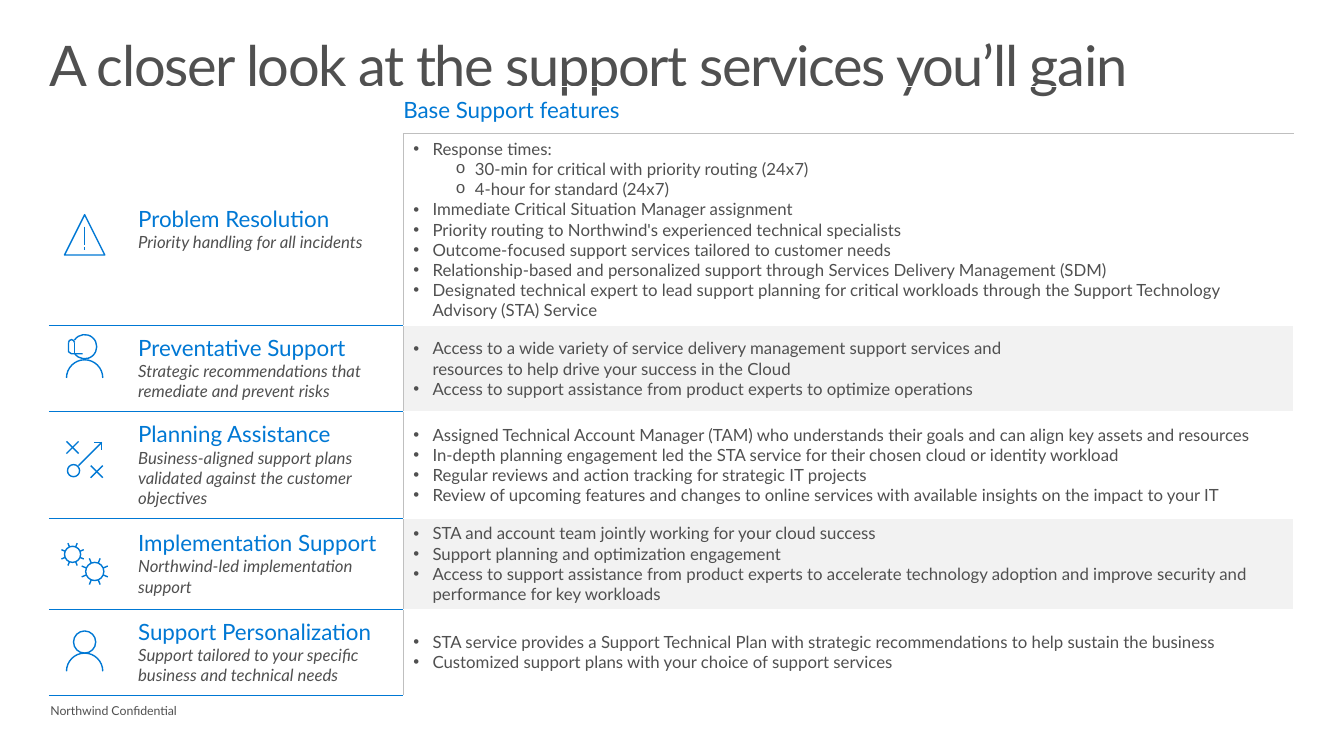
from dataclasses import dataclass
from math import cos, radians, sin, tan

from lxml.etree import SubElement
from pptx import Presentation
from pptx.dml.color import RGBColor as Rgb
from pptx.enum.text import MSO_ANCHOR as Anchor
from pptx.oxml.ns import qn
from pptx.util import Inches, Pt


@dataclass(frozen=True)
class Theme:
    font: str = "Lato"
    blue: str = "0078D4"
    text: str = "505050"
    rule: str = "BFBFBF"
    band: str = "F2F2F2"
    white: str = "FFFFFF"
    title: float = 40
    head: float = 16
    body: float = 12
    foot: float = 8.8


THEME = Theme()

# Marker, its font and the left margin for each list level
LEVELS = [("•", "Arial", 0.19), ("o", "Courier New", 0.61)]

# Each row: height, heading, summary, features as (level, text)
ROWS = [
    (1.87, "Problem Resolution", "Priority handling for all incidents", [
        (0, "Response times:"),
        (1, "30-min for critical with priority routing (24x7)"),
        (1, "4-hour for standard (24x7)"),
        (0, "Immediate Critical Situation Manager assignment"),
        (0, "Priority routing to Northwind's experienced technical specialists"),
        (0, "Outcome-focused support services tailored to customer needs"),
        (0, "Relationship-based and personalized support through Services Delivery Management (SDM)"),
        (0, "Designated technical expert to lead support planning for critical workloads "
            "through the Support Technology Advisory (STA) Service")]),
    (0.85, "Preventative Support", "Strategic recommendations that remediate and prevent risks", [
        (0, "Access to a wide variety of service delivery management support services and \v"
            "resources to help drive your success in the Cloud"),
        (0, "Access to support assistance from product experts to optimize operations")]),
    (1.04, "Planning Assistance",
     "Business-aligned support plans validated against the customer objectives", [
         (0, "Assigned Technical Account Manager (TAM) who understands their goals "
             "and can align key assets and resources"),
         (0, "In-depth planning engagement led the STA service for their chosen cloud or identity workload"),
         (0, "Regular reviews and action tracking for strategic IT projects"),
         (0, "Review of upcoming features and changes to online services "
             "with available insights on the impact to your IT")]),
    (0.88, "Implementation Support", "Northwind-led implementation support", [
        (0, "STA and account team jointly working for your cloud success"),
        (0, "Support planning and optimization engagement"),
        (0, "Access to support assistance from product experts to accelerate technology "
            "adoption and improve security and performance for key workloads")]),
    (0.85, "Support Personalization", "Support tailored to your specific business and technical needs", [
        (0, "STA service provides a Support Technical Plan with strategic recommendations "
            "to help sustain the business"),
        (0, "Customized support plans with your choice of support services")]),
]


# Text
def style(para, size, color, italic=False):
    for run in para.runs:
        font = run.font
        font.name, font.size, font.italic = THEME.font, Pt(size), italic
        font.color.rgb = Rgb.from_string(color)


def add_text(slide, text, box, size, pad=0, anchor=Anchor.TOP):
    frame = slide.shapes.add_textbox(*map(Inches, box)).text_frame
    frame.word_wrap = True
    frame.vertical_anchor = anchor
    frame.margin_left = frame.margin_right = 0
    frame.margin_top = frame.margin_bottom = Inches(pad)
    frame.text = text
    para = frame.paragraphs[0]
    style(para, size, THEME.text)
    return para


def add_bullet(para, level):
    mark, face, left = LEVELS[level]
    props = para._p.get_or_add_pPr()
    props.set("marL", str(Inches(left)))
    props.set("indent", str(Inches(-0.19)))
    SubElement(props, qn("a:buFont")).set("typeface", face)
    SubElement(props, qn("a:buChar")).set("char", mark)


# Table cells
def set_cell(cell, fill, pads, **edges):
    cell.vertical_anchor = Anchor.MIDDLE
    cell.margin_left, cell.margin_top, cell.margin_right, cell.margin_bottom = map(Inches, pads)
    props = cell._tc.get_or_add_tcPr()
    for side in "LRTB":
        if side in edges:
            color, width = edges[side]
            line = SubElement(props, qn(f"a:ln{side}"), w=str(Pt(width)))
            solid = SubElement(line, qn("a:solidFill"))
            SubElement(solid, qn("a:srgbClr"), val=color)
    if fill:
        cell.fill.solid()
        cell.fill.fore_color.rgb = Rgb.from_string(fill)
    else:
        cell.fill.background()


def set_label(cell, head, note):
    cell.text_frame.text = f"{head}\n{note}"
    first, second = cell.text_frame.paragraphs
    style(first, THEME.head, THEME.blue)
    style(second, THEME.body, THEME.text, True)


def set_list(cell, items):
    frame = cell.text_frame
    for i, (level, text) in enumerate(items):
        para = frame.add_paragraph() if i else frame.paragraphs[0]
        para.text = text
        add_bullet(para, level)
        style(para, THEME.body, THEME.text)


def add_grid(slide):
    box = map(Inches, (0.49, 0.86, 12.34, 5.94))
    grid = slide.shapes.add_table(len(ROWS) + 1, 2, *box).table
    grid.first_row = grid.horz_banding = False
    for col, width in zip(grid.columns, (3.51, 8.83)):
        col.width = Inches(width)
    blue, gray = (THEME.blue, 0.5), (THEME.rule, 0.5)
    thick, thin = (THEME.white, 1), (THEME.white, 0.5)

    # Header row
    grid.rows[0].height = Inches(0.45)
    blank, head = grid.cell(0, 0), grid.cell(0, 1)
    set_cell(blank, None, (0.1, 0.05, 0.1, 0.05), B=thick)
    set_cell(head, None, (0, 0.1, 0.19, 0.1), B=gray)
    head.text_frame.text = "Base Support features"
    style(head.text_frame.paragraphs[0], THEME.head, THEME.blue)

    # Service rows
    for i, (height, name, note, items) in enumerate(ROWS, 1):
        grid.rows[i].height = Inches(height)
        label, detail = grid.cell(i, 0), grid.cell(i, 1)
        set_cell(label, None, (0.88, 0.09, 0.09, 0.1),
                 T=thick if i == 1 else blue, R=gray, B=blue)
        set_cell(detail, None if i % 2 else THEME.band, (0.1, 0.05, 0.1, 0.05), L=gray,
                 T={1: gray, 2: thick}.get(i, thin), B=thick if i == 1 else thin)
        set_label(label, name, note)
        set_list(detail, items)


# Icon strokes: (is curved, points in inches)
def line(*points):
    return False, points


def arc(x, y, r, start=0, end=360):
    count = max(1, round(abs(end - start) / 90))
    step = radians(end - start) / count
    pull = 4 / 3 * tan(step / 4)
    points = [(x + r * cos(radians(start)), y + r * sin(radians(start)))]
    for i in range(count):
        a = radians(start) + i * step
        b = a + step
        for t, k in ((a, pull), (b, -pull), (b, 0)):
            points.append((x + r * (cos(t) - k * sin(t)), y + r * (sin(t) + k * cos(t))))
    return True, points


def cross(x, y, size=0.12):
    return [line((x, y), (x + size, y + size)), line((x + size, y), (x, y + size))]


def gear(x, y, r, tip):
    teeth = [radians(22.5 + 45 * i) for i in range(8)]
    return [arc(x, y, r)] + [line(*((x + d * cos(t), y + d * sin(t)) for d in (r, tip))) for t in teeth]


def bend(outline, strokes):
    """Join each three legs of a curved stroke into one Bezier leg."""
    nodes = iter(list(outline))
    for curved, points in strokes:
        next(nodes)
        legs = [next(nodes) for _ in points[1:]]
        if curved:
            for first, second, last in zip(legs[::3], legs[1::3], legs[2::3]):
                first.tag = qn("a:cubicBezTo")
                for leg in (second, last):
                    first.append(leg[0])
                    outline.remove(leg)


def add_icon(slide, strokes):
    pen = None
    for _, points in strokes:
        start, *rest = [(Inches(x), Inches(y)) for x, y in points]
        if pen:
            pen.move_to(*start)
        else:
            pen = slide.shapes.build_freeform(*start)
        pen.add_line_segments(rest, close=False)
    icon = pen.convert_to_shape()
    bend(icon._element.find(".//" + qn("a:path")), strokes)
    icon.shadow.inherit = False
    icon.fill.background()
    icon.line.color.rgb = Rgb.from_string(THEME.blue)
    icon.line.width = Pt(1)


def add_icons(slide):
    warning = [line((0.64, 2.53), (0.84, 2.13), (1.04, 2.53), (0.64, 2.53)),
               line((0.84, 2.25), (0.84, 2.43)), line((0.84, 2.45), (0.84, 2.48))]
    agent = [arc(0.84, 3.75, 0.18, 180, 360), arc(0.84, 3.44, 0.12, 214, 506),
             line((0.74, 3.51), (0.74, 3.4)), arc(0.71, 3.4, 0.03, 0, -180),
             line((0.68, 3.4), (0.68, 3.49), (0.71, 3.51), (0.82, 3.51))]
    plan = cross(0.66, 4.38) + cross(0.9, 4.62) + [
        arc(0.73, 4.67, 0.06), line((0.78, 4.62), (1.01, 4.39)),
        line((1.01, 4.46), (1.01, 4.39), (0.93, 4.39))]
    gears = gear(0.72, 5.5, 0.08, 0.12) + gear(0.94, 5.67, 0.09, 0.14)
    person = [arc(0.84, 6.37, 0.11), arc(0.84, 6.66, 0.18, 180, 360)]
    for strokes in (plan, gears, agent, warning, person):
        add_icon(slide, strokes)


def main():
    deck = Presentation()
    deck.slide_width, deck.slide_height = Inches(13.33), Inches(7.5)
    slide = deck.slides.add_slide(deck.slide_layouts[6])

    # Title
    title = add_text(slide, "A closer look at the support services you’ll gain",
                     (0.49, 0.28, 12.35, 1.02), THEME.title, 0.1)
    title.line_spacing = 0.9
    title.runs[0].font._element.set("spc", "-100")

    # Services and footer
    add_grid(slide)
    add_icons(slide)
    add_text(slide, "Northwind Confidential", (0.5, 6.97, 2.04, 0.15), THEME.foot,
             anchor=Anchor.MIDDLE)
    deck.save("out.pptx")


if __name__ == "__main__":
    main()
